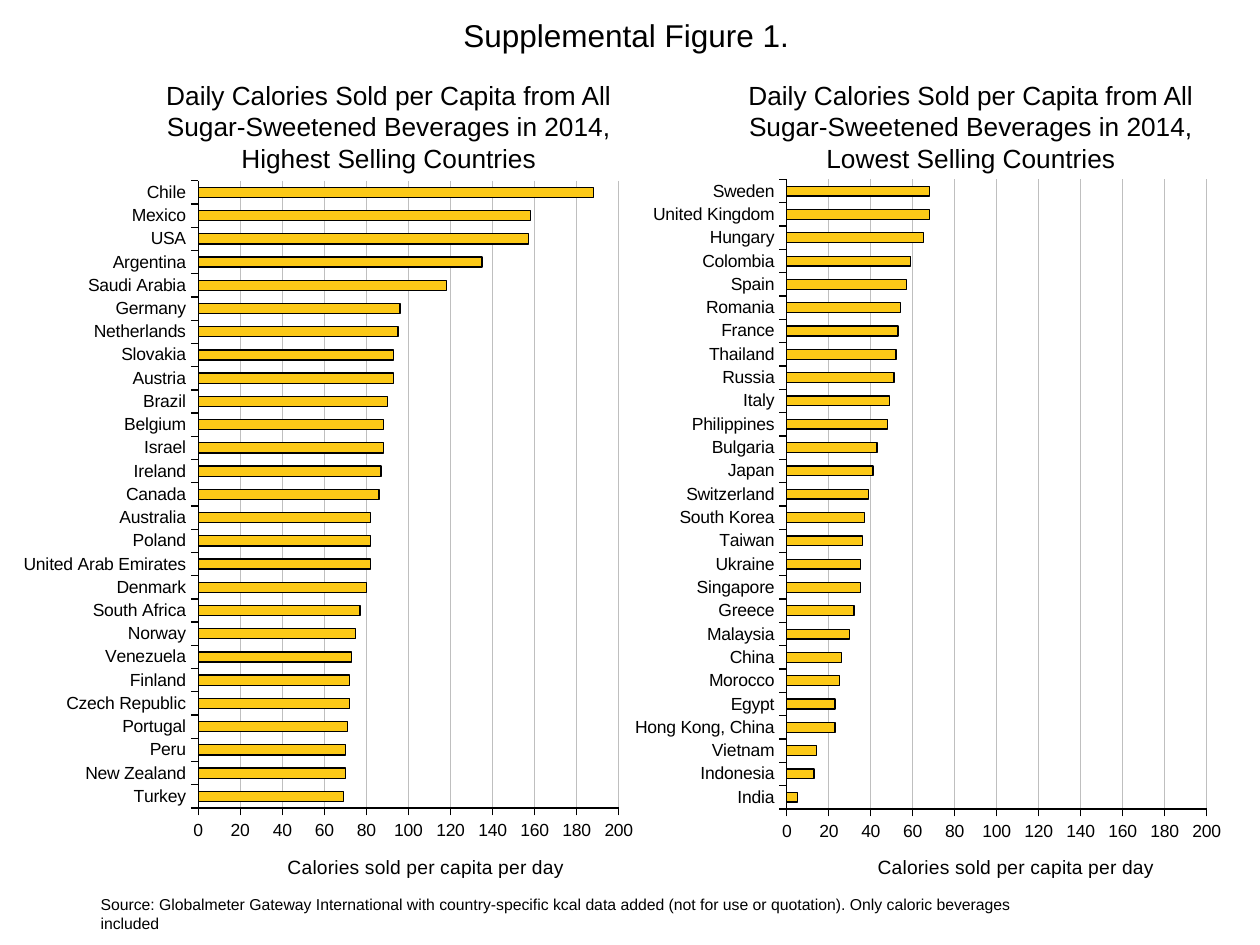
"""Build a slide with two ranked bar charts of daily beverage calories."""
from dataclasses import dataclass

from lxml import etree
from pptx import Presentation
from pptx.chart.data import CategoryChartData
from pptx.dml.color import RGBColor
from pptx.enum import chart as kinds, text as txt
from pptx.oxml.ns import qn
from pptx.util import Inches, Pt

FONT = "Arial"
HUES = {"ink": "000000", "bar": "FCC917", "grid": "BFBFBF"}
UNIT = "Calories sold per capita per day"
HEAD = "Daily Calories Sold per Capita from All Sugar-Sweetened Beverages in 2014, {} Selling Countries"


@dataclass
class Panel:
    """A headed bar chart, with its places in inches and chart fractions."""
    rank: str
    head: tuple
    box: tuple
    plot: tuple
    label: tuple
    gap: int
    rows: dict


HIGH = Panel(
    "Highest", (1, 0.58, 4.17, 0.86), (0.08, 1.33, 5.08, 5.83),
    (0.294, 0.018, 0.657, 0.854), (0.428, 0.93), 128,
    {"Turkey": 69, "New Zealand": 70, "Peru": 70, "Portugal": 71,
     "Czech Republic": 72, "Finland": 72, "Venezuela": 73, "Norway": 75,
     "South Africa": 77, "Denmark": 80, "United Arab Emirates": 82,
     "Poland": 82, "Australia": 82, "Canada": 86, "Ireland": 87,
     "Israel": 88, "Belgium": 88, "Brazil": 90, "Austria": 93,
     "Slovakia": 93, "Netherlands": 95, "Germany": 96, "Saudi Arabia": 118,
     "Argentina": 135, "USA": 157, "Mexico": 158, "Chile": 188})

LOW = Panel(
    "Lowest", (5.83, 0.58, 3.75, 0.86), (4.75, 1.17, 5.58, 5.92),
    (0.268, 0.043, 0.597, 0.844), (0.392, 0.943), 138,
    {"India": 5, "Indonesia": 13, "Vietnam": 14, "Hong Kong, China": 23,
     "Egypt": 23, "Morocco": 25, "China": 26, "Malaysia": 30, "Greece": 32,
     "Singapore": 35, "Ukraine": 35, "Taiwan": 36, "South Korea": 37,
     "Switzerland": 39, "Japan": 41, "Bulgaria": 43, "Philippines": 48,
     "Italy": 49, "Russia": 51, "Thailand": 52, "France": 53, "Romania": 54,
     "Spain": 57, "Colombia": 59, "Hungary": 65, "United Kingdom": 68,
     "Sweden": 68})


def hue(name: str) -> RGBColor:
    """Look up a colour by name."""
    return RGBColor.from_string(HUES[name])


def style(font, size: float) -> None:
    """Set the plain dark face at a size."""
    font.name, font.size, font.bold = FONT, Pt(size), False
    font.color.rgb = hue("ink")


def rule(line, name: str) -> None:
    """Set a thin line of a colour."""
    line.color.rgb, line.width = hue(name), Pt(0.75)


def write(slide, words: str, box: tuple, *, size: float, align=txt.PP_ALIGN.LEFT) -> None:
    """Add a wrapped text box."""
    frame = slide.shapes.add_textbox(*map(Inches, box)).text_frame
    frame.word_wrap = True
    frame.auto_size = txt.MSO_AUTO_SIZE.SHAPE_TO_FIT_TEXT
    para = frame.paragraphs[0]
    para.alignment = align
    run = para.add_run()
    run.text = words
    style(run.font, size)


def place(host, spot: tuple, index: int, inner: bool = False) -> None:
    """Fix the layout of a chart part by fractions of the chart."""
    for old in host.findall(qn("c:layout")):
        host.remove(old)
    layout = etree.Element(qn("c:layout"))
    host.insert(index, layout)
    manual = etree.SubElement(layout, qn("c:manualLayout"))
    pairs = [("layoutTarget", "inner")] if inner else []
    pairs += [("xMode", "edge"), ("yMode", "edge"), *zip("xywh", spot)]
    for tag, val in pairs:
        etree.SubElement(manual, qn(f"c:{tag}")).set("val", str(val))


def draw(slide, panel: Panel) -> None:
    """Add a bar chart and its heading."""
    data = CategoryChartData(number_format="0")
    data.categories = list(panel.rows)
    data.add_series("Series 1", list(panel.rows.values()))
    chart = slide.shapes.add_chart(
        kinds.XL_CHART_TYPE.BAR_STACKED, *map(Inches, panel.box), data).chart
    chart.has_legend = chart.has_title = False
    style(chart.font, 10)

    plot = chart.plots[0]
    plot.gap_width, plot.overlap, plot.vary_by_categories = panel.gap, 100, False
    fmt = plot.series[0].format
    fmt.fill.solid()
    fmt.fill.fore_color.rgb = hue("bar")
    rule(fmt.line, "ink")

    for axis in (chart.category_axis, chart.value_axis):
        axis.major_tick_mark = kinds.XL_TICK_MARK.OUTSIDE
        axis.minor_tick_mark = kinds.XL_TICK_MARK.NONE
        rule(axis.format.line, "ink")
        style(axis.tick_labels.font, 10)
    scale = chart.value_axis
    scale.minimum_scale, scale.maximum_scale, scale.major_unit = 0, 200, 20
    scale.tick_labels.number_format = "0"
    scale.tick_labels.number_format_is_linked = False
    scale.has_major_gridlines = True
    rule(scale.major_gridlines.format.line, "grid")
    frame = scale.axis_title.text_frame
    frame.text = UNIT
    style(frame.paragraphs[0].runs[0].font, 11)
    place(frame._txBody.getparent().getparent(), panel.label, 1)
    place(chart._chartSpace.chart.plotArea, panel.plot, 0, inner=True)
    write(slide, HEAD.format(panel.rank), panel.head, size=15, align=txt.PP_ALIGN.CENTER)


def main() -> None:
    """Compose and save the slide."""
    deck = Presentation()
    deck.slide_width, deck.slide_height = Inches(10), Inches(7.5)
    slide = deck.slides.add_slide(deck.slide_layouts[6])
    write(slide, "Source: Globalmeter Gateway International with country-specific kcal data added "
          "(not for use or quotation). Only caloric beverages included",
          (0.7, 7.05, 7.84, 0.56), size=9)
    for panel in (LOW, HIGH):
        draw(slide, panel)
    write(slide, "Supplemental Figure 1.", (3.58, 0.08, 5, 0.4), size=18)
    deck.save("out.pptx")


if __name__ == "__main__":
    main()
